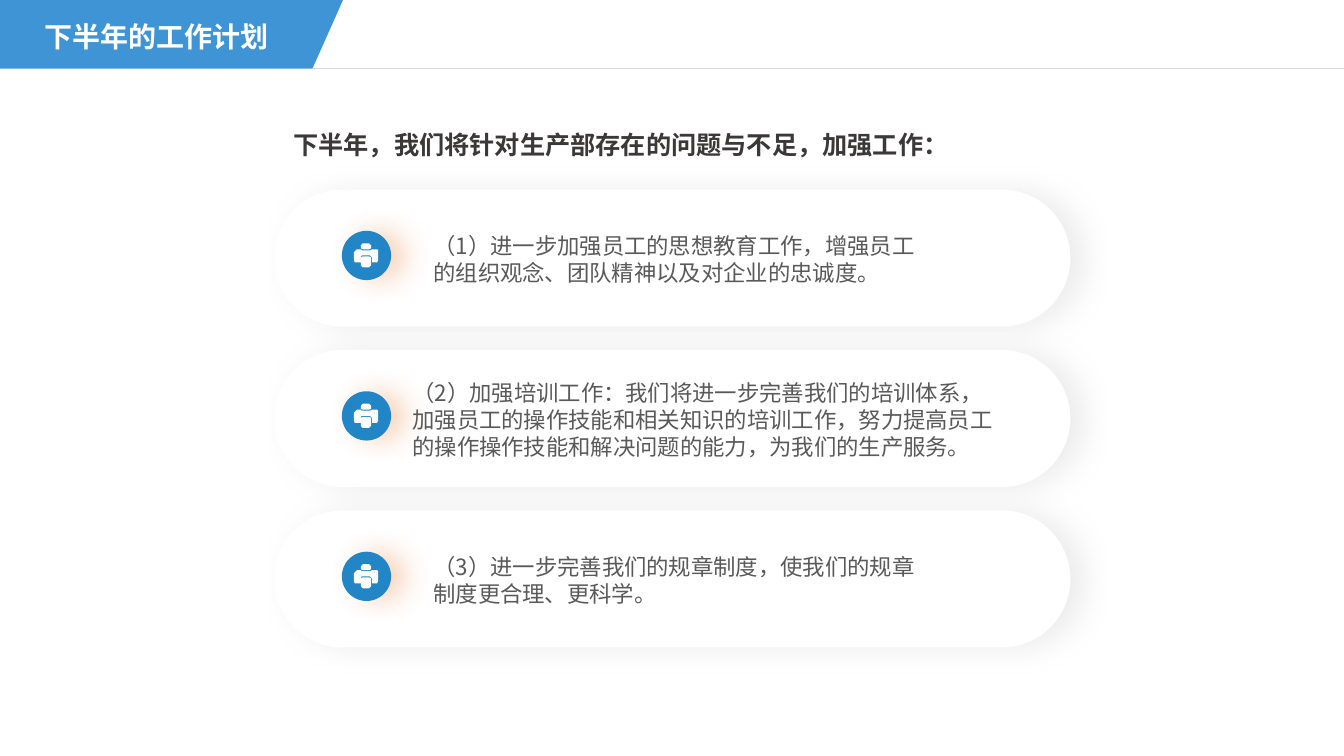
from lxml.etree import SubElement
from pptx import Presentation
from pptx.dml.color import RGBColor
from pptx.enum.shapes import MSO_CONNECTOR, MSO_SHAPE
from pptx.enum.text import MSO_ANCHOR, MSO_AUTO_SIZE, PP_ALIGN
from pptx.oxml.ns import qn
from pptx.util import Pt

FONT = "Noto Sans CJK SC"
WHITE = RGBColor(0xFF, 0xFF, 0xFF)
BANNER_BLUE = RGBColor(0x3F, 0x94, 0xD5)
BADGE_BLUE = RGBColor(0x22, 0x85, 0xC5)
RULE_GRAY = RGBColor(0xD9, 0xD9, 0xD9)
HEADING_GRAY = RGBColor(0x3B, 0x38, 0x38)
BODY_GRAY = RGBColor(0x59, 0x59, 0x59)
SHADOW_GRAY = RGBColor(0xA6, 0xA6, 0xA6)
GLOW_ORANGE = RGBColor(0xED, 0x7D, 0x31)

CARD_LEFT, CARD_TOP, CARD_STEP = 195.8, 135.4, 114.6
CARD_WIDTH, CARD_HEIGHT = 568.8, 97.9
LINE_RATIO = 1.21

ICON_UNIT = Pt(0.72)
ICON_PARTS = [
    [(15, 13), (17, 14), (17, 22), (15, 24), (9, 24), (7, 22), (7, 14), (9, 13)],
    [(7, 6), (8, 7), (16, 7), (18, 6), (23, 6), (24, 7), (24, 17), (23, 19),
     (18, 19), (18, 14), (16, 12), (8, 12), (7, 13), (7, 19), (1, 19),
     (0, 17), (0, 9), (1, 8), (3, 6)],
    [(21, 8), (20, 9), (21, 9)],
    [(15, 0), (17, 2), (17, 5), (15, 6), (9, 6), (7, 5), (7, 2), (9, 0)],
]

PLANS = [
    ("（1）进一步加强员工的思想教育工作，增强员工的组织观念、团队精神以及对企业的忠诚度。",
     309.6, 29.5, 355.7, 38.9),
    ("（2）加强培训工作：我们将进一步完善我们的培训体系，加强员工的操作技能和相关知识的"
     "培训工作，努力提高员工的操作操作技能和解决问题的能力，为我们的生产服务。",
     294.6, 19.4, 417.6, 58.3),
    ("（3）进一步完善我们的规章制度，使我们的规章制度更合理、更科学。",
     309.6, 29.5, 355.7, 38.9),
]


def paint(shape, color):
    """Give a shape a plain fill without outline or shadow."""
    shape.shadow.inherit = False
    shape.fill.solid()
    shape.fill.fore_color.rgb = color
    shape.line.fill.background()


def cast_shadow(shape, color, opacity):
    """Add a soft shadow that falls to the right."""
    effects = shape.element.spPr.find(qn("a:effectLst"))
    shadow = SubElement(effects, qn("a:outerShdw"), blurRad=str(Pt(20)),
                        dist=str(Pt(10)), dir="0", algn="l", rotWithShape="0")
    tint = SubElement(shadow, qn("a:srgbClr"), val=str(color))
    SubElement(tint, qn("a:alpha"), val=str(opacity * 1000))


def write(box, text, size, color, bold=False, align=PP_ALIGN.LEFT, inset=0, wrap=True):
    """Put one formatted paragraph into a text box or placeholder."""
    frame = box.text_frame
    settings = {"word_wrap": wrap, "auto_size": MSO_AUTO_SIZE.NONE,
                "vertical_anchor": MSO_ANCHOR.TOP,
                "margin_left": Pt(inset), "margin_right": Pt(inset),
                "margin_top": Pt(inset / 2), "margin_bottom": Pt(inset / 2)}
    for name, value in settings.items():
        setattr(frame, name, value)
    para = frame.paragraphs[0]
    spacing = {"alignment": align, "line_spacing": Pt(size * LINE_RATIO),
               "space_before": Pt(0), "space_after": Pt(0)}
    for name, value in spacing.items():
        setattr(para, name, value)
    span = para.add_run()
    span.text = text
    span.font.color.rgb = color
    for name, value in {"size": Pt(size), "bold": bold, "name": FONT}.items():
        setattr(span.font, name, value)
    SubElement(span.font._element, qn("a:ea"), typeface=FONT)


def place(shape, left, top, width, height):
    """Move and size a shape in points."""
    for name, value in zip(("left", "top", "width", "height"), (left, top, width, height)):
        setattr(shape, name, Pt(value))


def add_banner(page):
    """Draw the slanted title banner and the thin rule beside it."""
    outline = page.shapes.build_freeform(0, 0)
    outline.add_line_segments([(Pt(245), 0), (Pt(223.2), Pt(49)), (0, Pt(49))], close=True)
    banner = outline.convert_to_shape()
    paint(banner, BANNER_BLUE)
    title = page.shapes.title
    title.element.addprevious(banner.element)
    place(title, 21.6, 14, 180.7, 24.5)
    write(title, "下半年的工作计划", 20, WHITE, bold=True, align=PP_ALIGN.CENTER)
    rule = page.shapes.add_connector(MSO_CONNECTOR.STRAIGHT, Pt(223.2), Pt(49.2), Pt(960), Pt(49.2))
    rule.line.color.rgb = RULE_GRAY
    rule.line.width = Pt(0.5)
    SubElement(rule.element.spPr, qn("a:effectLst"))


def add_icon(shapes, left, top):
    """Draw the white badge icon as one outline of several parts."""
    outline = shapes.build_freeform(*ICON_PARTS[0][0], scale=914400 / 100)
    for index, points in enumerate(ICON_PARTS):
        if index:
            outline.move_to(*points[0])
        outline.add_line_segments(points[1:], close=True)
    paint(outline.convert_to_shape(Pt(left), Pt(top)), WHITE)


def add_card(page, top, text, text_left, text_drop, width, height):
    """Draw one rounded card with its badge and plan text."""
    shapes = page.shapes.add_group_shape().shapes
    card = shapes.add_shape(MSO_SHAPE.ROUNDED_RECTANGLE, Pt(CARD_LEFT), Pt(top),
                            Pt(CARD_WIDTH), Pt(CARD_HEIGHT))
    card.adjustments[0] = 0.5
    paint(card, WHITE)
    cast_shadow(card, SHADOW_GRAY, 20)
    badge = shapes.add_shape(MSO_SHAPE.OVAL, Pt(244.2), Pt(top + 29.5), Pt(35.2), Pt(35.2))
    paint(badge, BADGE_BLUE)
    cast_shadow(badge, GLOW_ORANGE, 32)
    add_icon(shapes, 252.8, top + 38.4)
    box = shapes.add_textbox(Pt(text_left), Pt(top + text_drop + 1), Pt(width), Pt(height))
    write(box, text, 16, BODY_GRAY)


def main():
    """Build the work plan slide."""
    deck = Presentation()
    deck.slide_width, deck.slide_height = Pt(960), Pt(540)
    page = deck.slides.add_slide(deck.slide_layouts[5])
    add_banner(page)
    heading = page.shapes.add_textbox(Pt(202.5), Pt(88.5), Pt(487.4), Pt(28.8))
    write(heading, "下半年，我们将针对生产部存在的问题与不足，加强工作：", 18,
          HEADING_GRAY, bold=True, inset=7.2, wrap=False)
    for index, plan in enumerate(PLANS):
        add_card(page, CARD_TOP + index * CARD_STEP, *plan)
    deck.save("out.pptx")


if __name__ == "__main__":
    main()
